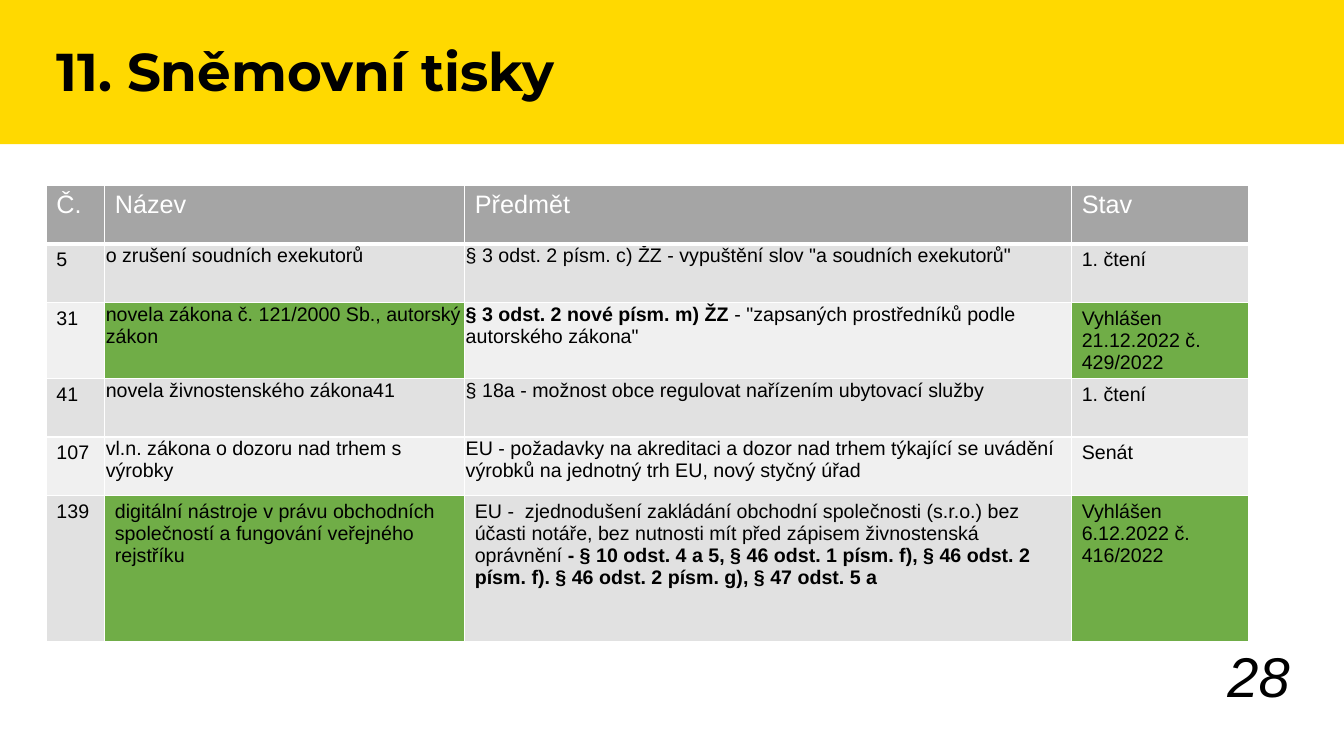
from lxml import etree
from pptx import Presentation
from pptx import util as u
from pptx.dml.color import RGBColor
from pptx.enum import shapes, text
from pptx.oxml import ns

HEADER = ["Č.", "Název", "Předmět", "Stav"]
PRINTS = [
    ["5", "o zrušení soudních exekutorů",
     '§ 3 odst. 2 písm. c) ŽZ - vypuštění slov "a soudních exekutorů"', "1. čtení"],
    ["31", "novela zákona č. 121/2000 Sb., autorský zákon",
     [("§ 3 odst. 2 nové písm. m) ŽZ ", True),
      ('- "zapsaných prostředníků podle autorského zákona"', False)],
     "Vyhlášen 21.12.2022 č. 429/2022"],
    ["41", "novela živnostenského zákona41",
     "§ 18a - možnost obce regulovat nařízením ubytovací služby", "1. čtení"],
    ["107", "vl.n. zákona o dozoru nad trhem s výrobky",
     "EU - požadavky na akreditaci a dozor nad trhem týkající se uvádění výrobků "
     "na jednotný trh EU, nový styčný úřad", "Senát"],
    ["139", "digitální nástroje v právu obchodních společností a fungování veřejného rejstříku",
     [("EU -  zjednodušení zakládání obchodní společnosti (s.r.o.) bez účasti notáře, "
       "bez nutnosti mít před zápisem živnostenská oprávnění ", False),
      ("- § 10 odst. 4 a 5, § 46 odst. 1 písm. f), § 46 odst. 2 písm. f). "
       "§ 46 odst. 2 písm. g), § 47 odst. 5 a", True)],
     "Vyhlášen 6.12.2022 č. 416/2022"],
]
COLUMN_WIDTHS = [0.58, 3.57, 6.02, 1.75]
ROW_HEIGHTS = [0.58] * 5 + [1.45]


def color(value):
    return RGBColor.from_string(value)


class SlideBuilder:
    """Holds the slide and its style, and adds each kind of element."""

    yellow, gray, green = "FFD900", "A5A5A5", "70AD47"
    bands = ["F0F0F0", "E1E1E1"]
    black, white = "000000", "FFFFFF"

    def __init__(self, slide):
        self.slide = slide

    def style(self, paragraph, size, font="Arial", fill=black, bold=False, italic=False):
        paragraph.font.name = font
        paragraph.font.size = u.Pt(size)
        paragraph.font.bold = bold
        paragraph.font.italic = italic
        paragraph.font.color.rgb = color(fill)

    def banner(self, left, top, width, height):
        shape = self.slide.shapes.add_shape(
            shapes.MSO_SHAPE.RECTANGLE, *map(u.Inches, (left, top, width, height)))
        shape.shadow.inherit = False
        shape.fill.solid()
        shape.fill.fore_color.rgb = color(self.yellow)
        shape.line.fill.background()

    def label(self, left, top, width, height, words, size, anchor="TOP", align="LEFT",
              spacing=1.0, **look):
        box = self.slide.shapes.add_textbox(*map(u.Inches, (left, top, width, height)))
        frame = box.text_frame
        frame.word_wrap = True
        frame.vertical_anchor = text.MSO_ANCHOR[anchor]
        paragraph = frame.paragraphs[0]
        paragraph.text = words
        paragraph.alignment = text.PP_ALIGN[align]
        paragraph.line_spacing = spacing
        self.style(paragraph, size, **look)

    def borders(self, cell, bottom):
        properties = cell._tc.get_or_add_tcPr()
        widths = {"lnL": 1, "lnR": 1, "lnT": 1, "lnB": bottom}
        for position, (side, width) in enumerate(widths.items()):
            line = etree.Element(ns.qn(f"a:{side}"), w=str(u.Pt(width)))
            solid = etree.SubElement(line, ns.qn("a:solidFill"))
            etree.SubElement(solid, ns.qn("a:srgbClr"), val=self.white)
            properties.insert(position, line)

    def cell(self, cell, content, fill, size, ink, tight, bottom):
        cell.fill.solid()
        cell.fill.fore_color.rgb = color(fill)
        self.borders(cell, bottom)
        if tight:
            cell.margin_left = cell.margin_top = cell.margin_right = u.Inches(0.01)
            cell.margin_bottom = 0
        paragraph = cell.text_frame.paragraphs[0]
        self.style(paragraph, size, fill=ink)
        if isinstance(content, str):
            paragraph.text = content
            return
        for words, bold in content:
            run = paragraph.add_run()
            run.text = words
            run.font.bold = bold

    def table(self, left, top, header, rows):
        frame = self.slide.shapes.add_table(
            len(rows) + 1, len(header), u.Inches(left), u.Inches(top),
            u.Inches(sum(COLUMN_WIDTHS)), u.Inches(sum(ROW_HEIGHTS)))
        table = frame.table
        for column, width in zip(table.columns, COLUMN_WIDTHS):
            column.width = u.Inches(width)
        for row, height in zip(table.rows, ROW_HEIGHTS):
            row.height = u.Inches(height)
        for c, content in enumerate(header):
            self.cell(table.cell(0, c), content, self.gray, 18, self.white, False, 3)
        for r, row in enumerate(rows, 1):
            enacted = row[-1].startswith("Vyhlášen")
            for c, content in enumerate(row):
                fill = self.green if enacted and c in (1, 3) else self.bands[r % 2]
                tight = c in (1, 2) and r < len(rows)
                self.cell(table.cell(r, c), content, fill, 14, self.black, tight, 1)


def main():
    presentation = Presentation()
    presentation.slide_width = u.Inches(13.33)
    presentation.slide_height = u.Inches(7.5)
    builder = SlideBuilder(presentation.slides.add_slide(presentation.slide_layouts[6]))
    builder.banner(0, 0, 13.33, 1.43)
    builder.table(0.46, 1.84, HEADER, PRINTS)
    builder.label(9.89, 6.51, 3, 0.57, "28", 40, anchor="BOTTOM", align="RIGHT", italic=True)
    builder.label(0.46, 0.4, 12.32, 1.02, "11. Sněmovní tisky", 38, spacing=0.9,
                  font="Montserrat", bold=True)
    presentation.save("out.pptx")


if __name__ == "__main__":
    main()
